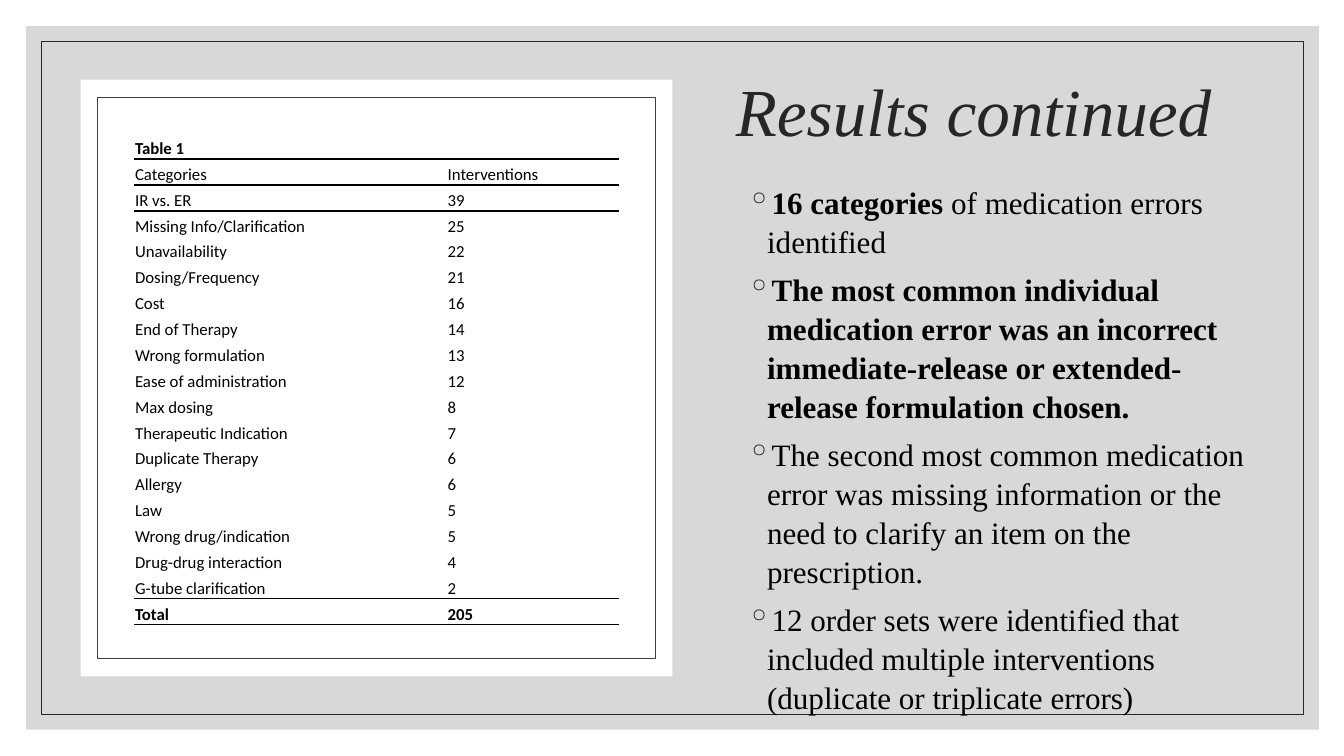
from lxml import etree
from pptx import Presentation
from pptx.dml.color import RGBColor
from pptx.enum.shapes import MSO_SHAPE as SHAPE
from pptx.enum.text import MSO_ANCHOR as ANCHOR
from pptx.oxml.ns import qn
from pptx.util import Inches, Pt

SERIF, SANS = "Times New Roman", "Calibri"
BLACK, DARK = "000000", "262626"
NO_STYLE = "{2D5ABB26-0587-4C30-8999-92F81FD0307C}"

ROWS = [
    ("Table 1", ""), ("Categories", "Interventions"),
    ("IR vs. ER", "39"), ("Missing Info/Clarification", "25"),
    ("Unavailability", "22"), ("Dosing/Frequency", "21"), ("Cost", "16"),
    ("End of Therapy", "14"), ("Wrong formulation", "13"),
    ("Ease of administration", "12"), ("Max dosing", "8"),
    ("Therapeutic Indication", "7"), ("Duplicate Therapy", "6"),
    ("Allergy", "6"), ("Law", "5"), ("Wrong drug/indication", "5"),
    ("Drug-drug interaction", "4"), ("G-tube clarification", "2"),
    ("Total", "205"),
]
LAST = len(ROWS) - 1
RULES = {0: 1.5, 1: 1.5, LAST - 1: 1, LAST: 0.5}  # row: points of the line below it

# Each bullet is a list of (text, bold) runs
BULLETS = [
    [("16 categories ", True), ("of medication errors identified", False)],
    [("The most common individual medication error was an incorrect "
      "immediate-release or extended-release formulation chosen.", True)],
    [("The second most common medication error was missing information or "
      "the need to clarify an item on the prescription.", False)],
    [("12 order sets were identified that included multiple interventions "
      "(duplicate or triplicate errors)", False)],
]


def rgb(color):
    return RGBColor.from_string(color)


def add_el(parent, tag, **attrs):
    el = etree.SubElement(parent, qn(tag))
    for name, value in attrs.items():
        el.set(name, str(value))
    return el


def add_run(p, text, color=BLACK, **font):
    r = p.add_run()
    r.text = text
    r.font.color.rgb = rgb(color)
    for name, value in font.items():
        setattr(r.font, name, value)


def add_rect(slide, box, fill=None, line=None, alpha=None):
    s = slide.shapes.add_shape(SHAPE.RECTANGLE, *map(Inches, box))
    s.shadow.inherit = False
    if fill:
        s.fill.solid()
        s.fill.fore_color.rgb = rgb(fill)
        if alpha:
            color = s.fill._xPr.find(qn("a:solidFill"))[0]
            add_el(color, "a:alpha", val=alpha * 1000)
    else:
        s.fill.background()
    if line:
        s.line.color.rgb = rgb(line)
        s.line.width = Pt(0.5)
    else:
        s.line.fill.background()


def add_panel(slide, box, inset, fill, line, alpha=None):
    """Filled rectangle with a thin frame inside it."""
    x, y, w, h = box
    dx, dy = inset
    add_rect(slide, box, fill=fill, alpha=alpha)
    add_rect(slide, (x + dx, y + dy, w - 2 * dx, h - 2 * dy), line=line)


def add_text_box(slide, box):
    tf = slide.shapes.add_textbox(*map(Inches, box)).text_frame
    tf.word_wrap = True
    return tf


def add_title(slide, box):
    tf = add_text_box(slide, box)
    tf.vertical_anchor = ANCHOR.MIDDLE
    p = tf.paragraphs[0]
    p.line_spacing = 0.9
    add_run(p, "Results continued", DARK, name=SERIF, size=Pt(48), italic=True)


def add_bullets(slide, box):
    tf = add_text_box(slide, box)
    for i, runs in enumerate(BULLETS):
        p = tf.add_paragraph() if i else tf.paragraphs[0]
        p.line_spacing = 1.05
        p.space_after = Pt(6)
        pPr = p._p.get_or_add_pPr()
        pPr.set("marL", str(Inches(0.31)))
        pPr.set("indent", str(Inches(-0.2)))
        add_el(add_el(pPr, "a:buClr"), "a:srgbClr", val=DARK)
        add_el(pPr, "a:buChar", char="◦")
        for text, bold in runs:
            add_run(p, text, name=SERIF, size=Pt(22.2), bold=bold)


def add_border(cell, tag, points):
    ln = add_el(cell._tc.get_or_add_tcPr(), tag, w=Pt(points))
    add_el(add_el(ln, "a:solidFill"), "a:srgbClr", val=BLACK)


def fill_cell(cell, text, row):
    margins = dict(margin_left=0.01, margin_right=0.01, margin_top=0.01, margin_bottom=0)
    for name, value in margins.items():
        setattr(cell, name, Inches(value))
    cell.vertical_anchor = ANCHOR.BOTTOM
    for tag, ruled in (("a:lnT", row - 1), ("a:lnB", row)):
        if ruled in RULES:
            add_border(cell, tag, RULES[ruled])
    cell.fill.background()
    p = cell.text_frame.paragraphs[0]
    if text:
        add_run(p, text, name=SANS, size=Pt(12), bold=row in (0, LAST))
    else:
        add_el(p._p, "a:endParaRPr", sz=1200)


def add_results_table(slide, box):
    shape = slide.shapes.add_table(len(ROWS), 2, *map(Inches, box))
    table = shape.table
    table.first_row = table.horz_banding = False
    table._tbl.tblPr.find(qn("a:tableStyleId")).text = NO_STYLE
    for col, width in zip(table.columns, (3.1, 1.71)):
        col.width = Inches(width)
    for i, values in enumerate(ROWS):
        table.rows[i].height = Inches(box[3] / len(ROWS))
        for j, text in enumerate(values):
            fill_cell(table.cell(i, j), text, i)


def main():
    prs = Presentation()
    prs.slide_width, prs.slide_height = Inches(13.33), Inches(7.5)
    slide = prs.slides.add_slide(prs.slide_layouts[6])
    add_panel(slide, (0.26, 0.26, 12.82, 6.98), (0.15, 0.15), "BFBFBF", DARK, alpha=60)
    add_title(slide, (7.2, 0.52, 5.42, 1.24))
    add_panel(slide, (0.8, 0.79, 5.87, 5.92), (0.17, 0.18), "FFFFFF", "404040")
    add_bullets(slide, (7.2, 1.75, 5.42, 4.85))
    add_results_table(slide, (1.33, 1.32, 4.81, 4.88))
    prs.save("out.pptx")


if __name__ == "__main__":
    main()
